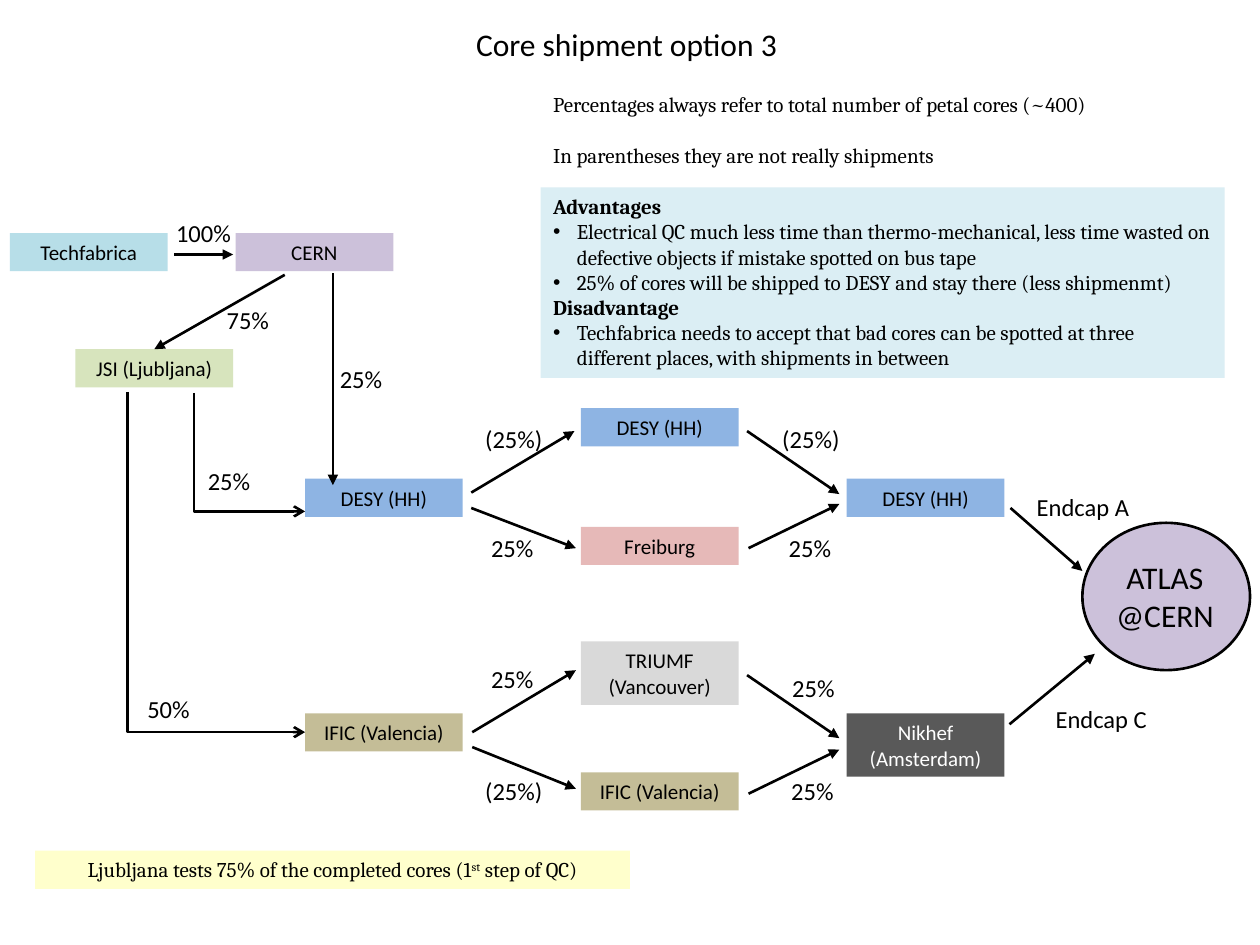
"""Build the slide on core shipment option 3."""
import lxml.etree
import pptx
import pptx.dml.color
import pptx.enum.shapes
import pptx.enum.text
import pptx.oxml.ns
import pptx.util

Cm = pptx.util.Cm
Pt = pptx.util.Pt
tint = pptx.dml.color.RGBColor.from_string
qn = pptx.oxml.ns.qn
kinds = pptx.enum.shapes.MSO_SHAPE
links = pptx.enum.shapes.MSO_CONNECTOR
mid = pptx.enum.text.PP_ALIGN.CENTER
centre = pptx.enum.text.MSO_ANCHOR.MIDDLE
top = pptx.enum.text.MSO_ANCHOR.TOP
left = pptx.enum.text.PP_ALIGN.LEFT
fits = pptx.enum.text.MSO_AUTO_SIZE


def write(para, text, size=12, font="Calibri", hue="000000", bold=False):
    run = para.add_run()
    run.text = text
    run.font.size = Pt(size)
    run.font.name = font
    run.font.bold = bold
    run.font.color.rgb = tint(hue)
    return run


def box(place, x, y, wide, high, fill=None, anchor=top, align=left):
    spot = Cm(x), Cm(y), Cm(wide), Cm(high)
    if fill:
        item = place.add_shape(kinds.RECTANGLE, *spot)
        item.shadow.inherit = False
        item.fill.solid()
        item.fill.fore_color.rgb = tint(fill)
        item.line.fill.background()
    else:
        item = place.add_textbox(*spot)
    frame = item.text_frame
    frame.word_wrap = True
    frame.auto_size = fits.SHAPE_TO_FIT_TEXT
    frame.vertical_anchor = anchor
    frame.paragraphs[0].alignment = align
    return item


deck = pptx.Presentation()
deck.slide_width, deck.slide_height = Cm(25.4), Cm(19.05)
slide = deck.slides.add_slide(deck.slide_layouts[5])
shapes = slide.shapes

title = shapes.title
title.left, title.top, title.width, title.height = Cm(1.2), Cm(0.43), Cm(22.86), Cm(0.92)
title.text_frame.auto_size = fits.NONE
title.text_frame.vertical_anchor = centre
title.text_frame.paragraphs[0].alignment = mid
write(title.text_frame.paragraphs[0], "Core shipment option 3", 18)

cols = 6.15, 11.71, 17.07
sites = [
    ("Techfabrica", 0.2, 4.7, 0.77, "B7DEE8"),
    ("CERN", 4.75, 4.7, 0.77, "CCC1DA"),
    ("JSI (Ljubljana)", 1.52, 7.04, 0.77, "D7E4BD"),
    ("DESY (HH)", cols[0], 9.65, 0.77, "8EB4E3"),
    ("IFIC (Valencia)", cols[0], 14.38, 0.77, "C4BD97"),
    ("DESY (HH)", cols[1], 8.23, 0.77, "8EB4E3"),
    ("Freiburg", cols[1], 10.62, 0.77, "E6B9B8"),
    ("TRIUMF (Vancouver)", cols[1], 12.93, 1.28, "D9D9D9"),
    ("IFIC (Valencia)", cols[1], 15.57, 0.77, "C4BD97"),
    ("DESY (HH)", cols[2], 9.65, 0.77, "8EB4E3"),
    ("Nikhef (Amsterdam)", cols[2], 14.38, 1.28, "595959"),
]
nodes = {}
for name, x, y, high, fill in sites:
    node = box(shapes, x, y, 3.18, high, fill, centre, mid)
    hue = "FFFFFF" if fill == "595959" else "000000"
    write(node.text_frame.paragraphs[0], name, hue=hue)
    nodes[name] = node

group = shapes.add_group_shape()
disc = group.shapes.add_shape(kinds.OVAL, Cm(21.82), Cm(10.54), Cm(3.38), Cm(2.97))
disc.shadow.inherit = False
disc.fill.solid()
disc.fill.fore_color.rgb = tint("CCC1DA")
disc.line.color.rgb = tint("000000")
disc.line.width = Pt(1.5)
goal = box(group.shapes, 22.1, 11.13, 2.77, 1.8, align=mid)
write(goal.text_frame.paragraphs[0], "ATLAS @CERN", 18)

routes = [
    (2.57, 7.9, 6.15, 14.76, "arrow"),
    (3.91, 7.92, 6.15, 10.31, "arrow"),
    (3.51, 5.13, 4.7, 5.13, "triangle"),
    (6.71, 5.51, 6.71, 9.78, "triangle"),
    (9.5, 9.93, 11.58, 8.69, "triangle"),
    (9.5, 10.24, 11.61, 11.05, "triangle"),
    (9.52, 14.76, 11.61, 13.51, "triangle"),
    (9.52, 15.06, 11.61, 15.9, "triangle"),
    (15.06, 8.69, 16.92, 9.96, "triangle"),
    (15.09, 11.05, 16.92, 10.16, "triangle"),
    (15.06, 13.61, 16.92, 14.88, "triangle"),
    (15.09, 16, 16.92, 15.11, "triangle"),
    (20.37, 10.24, 21.82, 11.51, "triangle"),
    (20.35, 14.6, 22.07, 13.18, "triangle"),
    (5.74, 5.54, 3.11, 7.04, "triangle"),
]
for x, y, endx, endy, head in routes:
    bent = head == "arrow"
    kind = links.ELBOW if bent else links.STRAIGHT
    route = shapes.add_connector(kind, Cm(x), Cm(y), Cm(endx), Cm(endy))
    route.line.color.rgb = tint("000000")
    route.line.width = Pt(1.5)
    props = route._element.spPr
    if bent:
        wide, high = endy - y, endx - x
        route.left, route.top = Cm((x + endx - wide) / 2), Cm((y + endy - high) / 2)
        route.width, route.height = Cm(wide), Cm(high)
        props.find(qn("a:xfrm")).set("rot", "16200000")
        props.find(qn("a:xfrm")).set("flipH", "1")
        props.find(qn("a:prstGeom")).set("prst", "bentConnector2")
    lxml.etree.SubElement(props.find(qn("a:ln")), qn("a:tailEnd"), type=head)
    lxml.etree.SubElement(props, qn("a:effectLst"))
route.end_connect(nodes["JSI (Ljubljana)"], 0)

labels = [
    ("100%", 3.3, 4.27), ("75%", 4.32, 6.02), ("25%", 6.6, 7.21),
    ("50%", 2.72, 13.87), ("25%", 3.94, 9.27), ("25%", 9.65, 10.62),
    ("25%", 9.65, 13.26), ("(25%)", 9.53, 15.52), ("(25%)", 9.53, 8.43),
    ("(25%)", 15.52, 8.43), ("25%", 15.65, 10.62), ("25%", 15.72, 13.44),
    ("25%", 15.7, 15.52), ("Endcap A", 20.65, 9.8), ("Endcap C", 21.03, 14.07),
]
for text, x, y in labels:
    label = box(shapes, x, y, 2.67 if "Endcap" in text else 1.8, 0.86)
    write(label.text_frame.paragraphs[0], text, 14)

points = [
    ("Advantages", True),
    ("Electrical QC much less time than thermo-mechanical, less time wasted on "
     "defective objects if mistake spotted on bus tape", False),
    ("25% of cores will be shipped to DESY and stay there (less shipmenmt)", False),
    ("Disadvantage", True),
    ("Techfabrica needs to accept that bad cores can be spotted at three different "
     "places, with shipments in between", False),
]
frame = box(shapes, 10.9, 3.78, 13.79, 3.84, "DBEEF4").text_frame
for num, (text, bold) in enumerate(points):
    para = frame.add_paragraph() if num else frame.paragraphs[0]
    para.alignment = left
    write(para, text, font="Cambria", bold=bold)
    if not bold:
        props = para._p.get_or_add_pPr()
        props.set("marL", str(Cm(0.48)))
        props.set("indent", str(-Cm(0.48)))
        lxml.etree.SubElement(props, qn("a:buFont"), typeface="Arial")
        lxml.etree.SubElement(props, qn("a:buChar"), char="•")

frame = box(shapes, 10.9, 1.73, 11.99, 1.8).text_frame
write(frame.paragraphs[0], "Percentages always refer to total number of petal cores (~400)",
      font="Cambria")
para = frame.add_paragraph()
para.space_before = Pt(14.4)
write(para, "In parentheses they are not really shipments", font="Cambria")

para = box(shapes, 0.71, 17.15, 11.99, 0.77, "FFFFCC", align=mid).text_frame.paragraphs[0]
write(para, "Ljubljana tests 75% of the completed cores (1", font="Cambria")
power = write(para, "st", font="Cambria")
power.font._element.set("baseline", "30000")
write(para, " step of QC)", font="Cambria")

deck.save("out.pptx")
